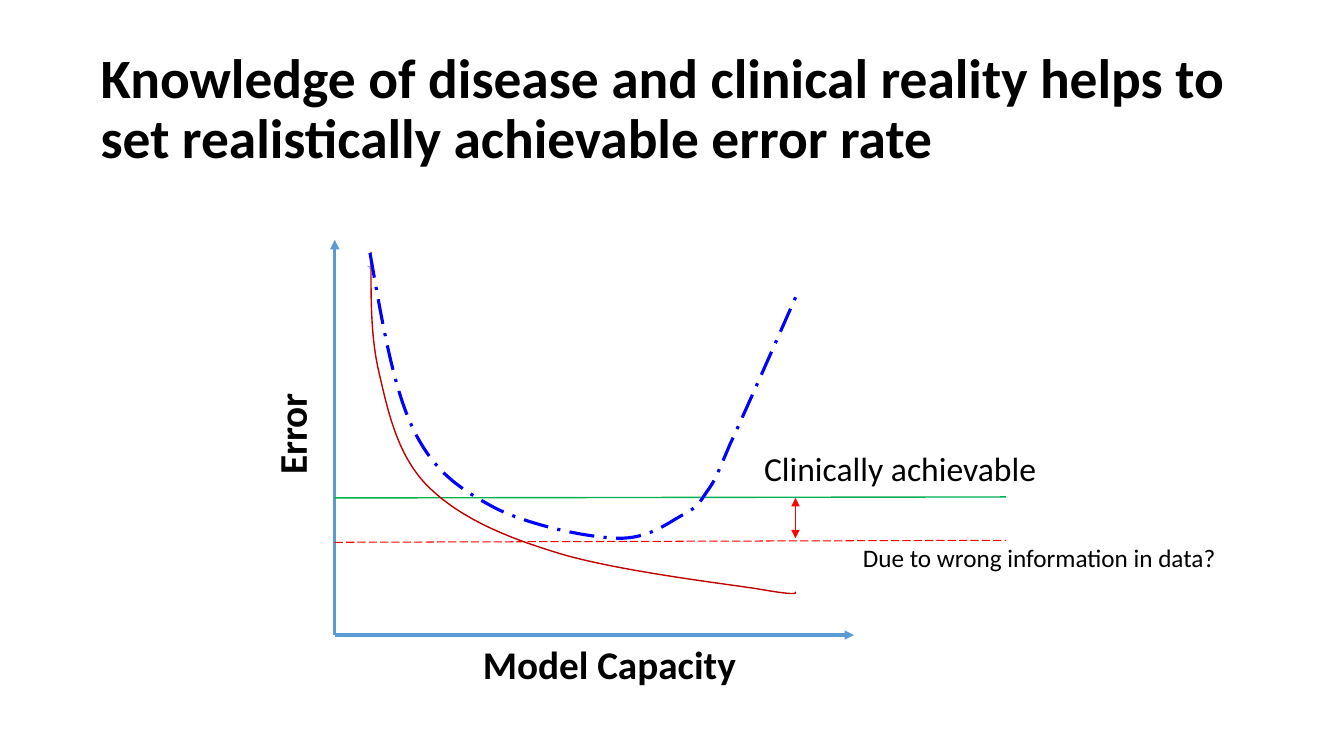
from lxml import etree
from pptx import Presentation
from pptx.dml.color import RGBColor
from pptx.enum import dml, shapes, text
from pptx.oxml.ns import qn
from pptx.util import Inches, Pt

COLORS = {"text": "000000", "axis": "5B9BD5", "train": "C00000",
          "test": "0000FF", "clinical": "00B050", "gap": "FF0000"}
DASH = dml.MSO_LINE

prs = Presentation()
prs.slide_width, prs.slide_height = Inches(13.33), Inches(7.5)
s = prs.slides.add_slide(prs.slide_layouts[6])


def set_line(shape, color, width, dash=None):
    shape.line.color.rgb = RGBColor.from_string(COLORS[color])
    shape.line.width = Pt(width)
    if dash:
        shape.line.dash_style = dash


def add_label(words, box, size, bold=False):
    sp = s.shapes.add_textbox(*[Inches(v) for v in box])
    tf = sp.text_frame
    tf.word_wrap = False
    tf.auto_size = text.MSO_AUTO_SIZE.SHAPE_TO_FIT_TEXT
    p = tf.paragraphs[0]
    p.text = words
    p.font.name, p.font.size, p.font.bold = "Calibri", Pt(size), bold
    p.font.color.rgb = RGBColor.from_string(COLORS["text"])
    return sp


title = add_label("Knowledge of disease and clinical reality helps to "
                  "set realistically achievable error rate",
                  (0.9, 0.37, 11.5, 1.45), 39.6, bold=True)
title.text_frame.word_wrap = True
title.text_frame.auto_size = text.MSO_AUTO_SIZE.NONE
title.text_frame.vertical_anchor = text.MSO_ANCHOR.MIDDLE
title.text_frame.paragraphs[0].line_spacing = 0.9

# Axes
X0, Y0, LEVEL_END, GAP_X = 3.32, 6.3, 9.98, 7.89
lines = [
    ((X0, Y0), (X0, 2.38), "axis", 2.25, None, ["tailEnd"]),
    ((X0, Y0), (8.47, Y0), "axis", 2.25, None, ["tailEnd"]),
    # Error levels and the gap between them
    ((X0, 4.94), (LEVEL_END, 4.93), "clinical", 1, None, []),
    ((X0, 5.38), (LEVEL_END, 5.36), "gap", 0.75, DASH.LONG_DASH, []),
    ((GAP_X, 4.94), (GAP_X, 5.34), "gap", 0.5, None, ["headEnd", "tailEnd"]),
]
for start, end, color, width, dash, heads in lines:
    c = s.shapes.add_connector(shapes.MSO_CONNECTOR.STRAIGHT,
                               *[Inches(v) for v in start + end])
    set_line(c, color, width, dash)
    ln = c.line._get_or_add_ln()
    for head in heads:
        etree.SubElement(ln, qn("a:" + head), type="triangle")
    etree.SubElement(c._element.spPr, qn("a:effectLst"))

arc = s.shapes.add_shape(shapes.MSO_SHAPE.ARC, Inches(3.62), Inches(2.64),
                         Inches(0.05), Inches(0.05))
arc.fill.background()
arc.shadow.inherit = False
set_line(arc, "axis", 0.5)

# Error curves: a start point, then Bezier segments of two controls and an end
curves = [
    ("train", 1, None, (3.68, 2.5), [
        ((3.68, 2.91), (3.67, 3.32), (3.76, 3.7)),
        ((3.85, 4.09), (3.94, 4.5), (4.22, 4.8)),
        ((4.51, 5.1), (4.93, 5.3), (5.48, 5.47)),
        ((6.03, 5.65), (7.1, 5.78), (7.5, 5.84)),
        ((7.9, 5.91), (7.9, 5.89), (7.89, 5.87))]),
    ("test", 2.25, DASH.LONG_DASH_DOT, (3.67, 2.51), [
        ((3.79, 3.19), (3.9, 3.86), (4.11, 4.28)),
        ((4.32, 4.7), (4.58, 4.86), (4.91, 5.04)),
        ((5.25, 5.21), (5.81, 5.33), (6.12, 5.34)),
        ((6.43, 5.35), (6.62, 5.19), (6.77, 5.11)),
        ((6.92, 5.03), (6.93, 5), (7.01, 4.88)),
        ((7.09, 4.77), (7.1, 4.74), (7.24, 4.41)),
        ((7.39, 4.09), (7.9, 2.93), (7.9, 2.93))]),
]
for color, width, dash, start, segments in curves:
    builder = s.shapes.build_freeform(Inches(start[0]), Inches(start[1]))
    builder.add_line_segments([(Inches(x), Inches(y)) for _, _, (x, y) in segments],
                              close=False)
    curve = builder.convert_to_shape()
    # Turn each straight segment into a Bezier one
    for straight, segment in zip(list(curve._element.iter(qn("a:lnTo"))), segments):
        bend = etree.Element(qn("a:cubicBezTo"))
        for x, y in segment:
            etree.SubElement(bend, qn("a:pt"), x=str(Inches(x) - curve.left),
                             y=str(Inches(y) - curve.top))
        straight.getparent().replace(straight, bend)
    curve.fill.background()
    curve.shadow.inherit = False
    set_line(curve, color, width, dash)

add_label("Clinically achievable", (7.48, 4.39, 2.93, 0.5), 24)
add_label("Error", (2.38, 4.01, 1.02, 0.57), 28, bold=True).rotation = 270
add_label("Model Capacity", (4.69, 6.3, 2.74, 0.57), 28, bold=True)
add_label("Due to wrong information in data?", (8.46, 5.33, 3.74, 0.4), 18)

prs.save("out.pptx")
